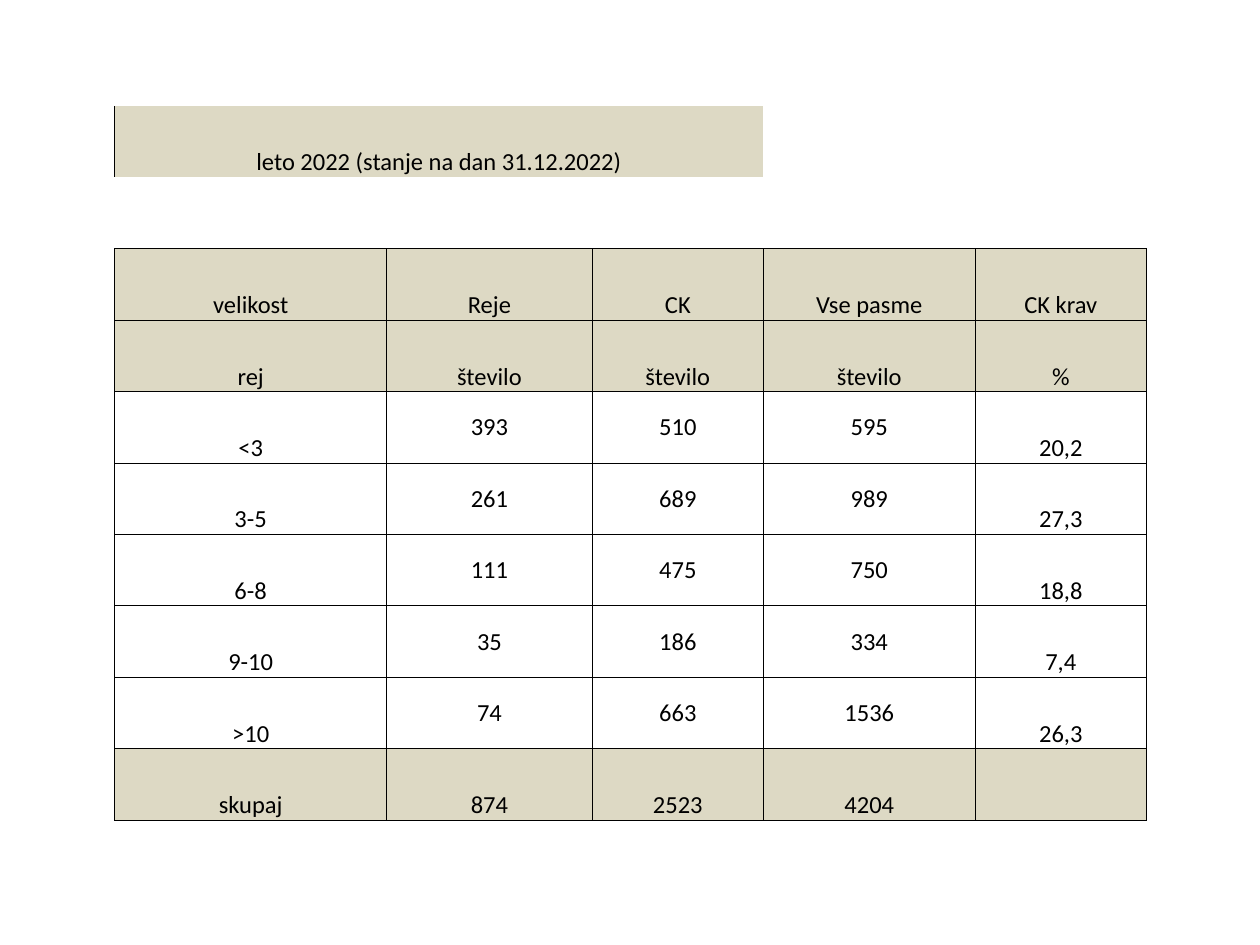
from lxml.etree import SubElement
from pptx import Presentation
from pptx.dml.color import RGBColor
from pptx.enum.text import MSO_ANCHOR, PP_ALIGN
from pptx.oxml.ns import qn
from pptx.util import Inches, Pt

TITLE = "leto 2022 (stanje na dan 31.12.2022)"
HERD_ROWS = [
    ["velikost", "Reje", "CK", "Vse pasme", "CK krav"],
    ["rej", "število", "število", "število", "%"],
    ["<3", "393", "510", "595", "20,2"],
    ["3-5", "261", "689", "989", "27,3"],
    ["6-8", "111", "475", "750", "18,8"],
    ["9-10", "35", "186", "334", "7,4"],
    [">10", "74", "663", "1536", "26,3"],
    ["skupaj", "874", "2523", "4204", ""],
]
COLUMN_WIDTHS = [2.16, 1.63, 1.36, 1.68, 1.36]
TITLE_ROW, GAP_ROW, FIRST_HERD_ROW = 0, 1, 2
SHADED_ROWS = {2, 3, 9}
BEIGE, BLACK = "DDD9C4", "000000"
TABLE_FORMAT = {"first_row": False, "horz_banding": False}
CELL_FORMAT = {"margin_left": 0, "margin_right": 0, "margin_top": 0, "margin_bottom": 0}
FONT_FORMAT = {"name": "Calibri", "size": Pt(14)}


def color(hex_value):
    """Turn a hex string into a colour."""
    return RGBColor.from_string(hex_value)


def apply_format(target, values):
    """Set each attribute named in the format values."""
    for name, value in values.items():
        setattr(target, name, value)


def set_borders(cell, sides):
    """Draw thin black lines on the given sides and none on the others."""
    properties = cell._tc.get_or_add_tcPr()
    for side in "LRTB":
        line = SubElement(properties, qn(f"a:ln{side}"), w=str(Pt(0.5)))
        if side in sides:
            fill = SubElement(line, qn("a:solidFill"))
            SubElement(fill, qn("a:srgbClr"), val=BLACK)
        else:
            SubElement(line, qn("a:noFill"))


def style_cell(cell, text, sides, shaded, anchor):
    """Write one cell with its borders, fill and text format."""
    set_borders(cell, sides)
    if shaded:
        cell.fill.solid()
        cell.fill.fore_color.rgb = color(BEIGE)
    else:
        cell.fill.background()
    apply_format(cell, CELL_FORMAT | {"vertical_anchor": anchor})
    cell.text = text
    paragraph = cell.text_frame.paragraphs[0]
    paragraph.alignment = PP_ALIGN.CENTER
    apply_format(paragraph.font, FONT_FORMAT)
    paragraph.font.color.rgb = color(BLACK)


def add_herd_table(slide, left, top, width, height):
    """Place the herd size table in the given box."""
    contents = [[TITLE, "", "", "", ""], [""] * 5, *HERD_ROWS]
    table = slide.shapes.add_table(
        len(contents), len(COLUMN_WIDTHS), left, top, width, height
    ).table
    apply_format(table, TABLE_FORMAT)
    for column, share in zip(table.columns, COLUMN_WIDTHS):
        column.width = int(width * share / sum(COLUMN_WIDTHS))
    for r, texts in enumerate(contents):
        for c, text in enumerate(texts):
            in_title = r == TITLE_ROW and c < 3
            if r >= FIRST_HERD_ROW:
                sides = "LRTB"
            elif r == GAP_ROW:
                sides = "B"
            else:
                sides = "L" if c == 0 else ""
            centred = r >= FIRST_HERD_ROW and r not in SHADED_ROWS and 0 < c < 4
            anchor = MSO_ANCHOR.MIDDLE if centred else MSO_ANCHOR.BOTTOM
            style_cell(table.cell(r, c), text, sides, in_title or r in SHADED_ROWS, anchor)
    table.cell(TITLE_ROW, 0).merge(table.cell(TITLE_ROW, 2))


def main():
    """Build and save the presentation."""
    presentation = Presentation()
    presentation.slide_width, presentation.slide_height = Inches(10), Inches(7.5)
    slide = presentation.slides.add_slide(presentation.slide_layouts[6])
    add_herd_table(slide, Inches(0.91), Inches(0.84), Inches(8.19), Inches(5.67))
    presentation.save("out.pptx")


if __name__ == "__main__":
    main()
